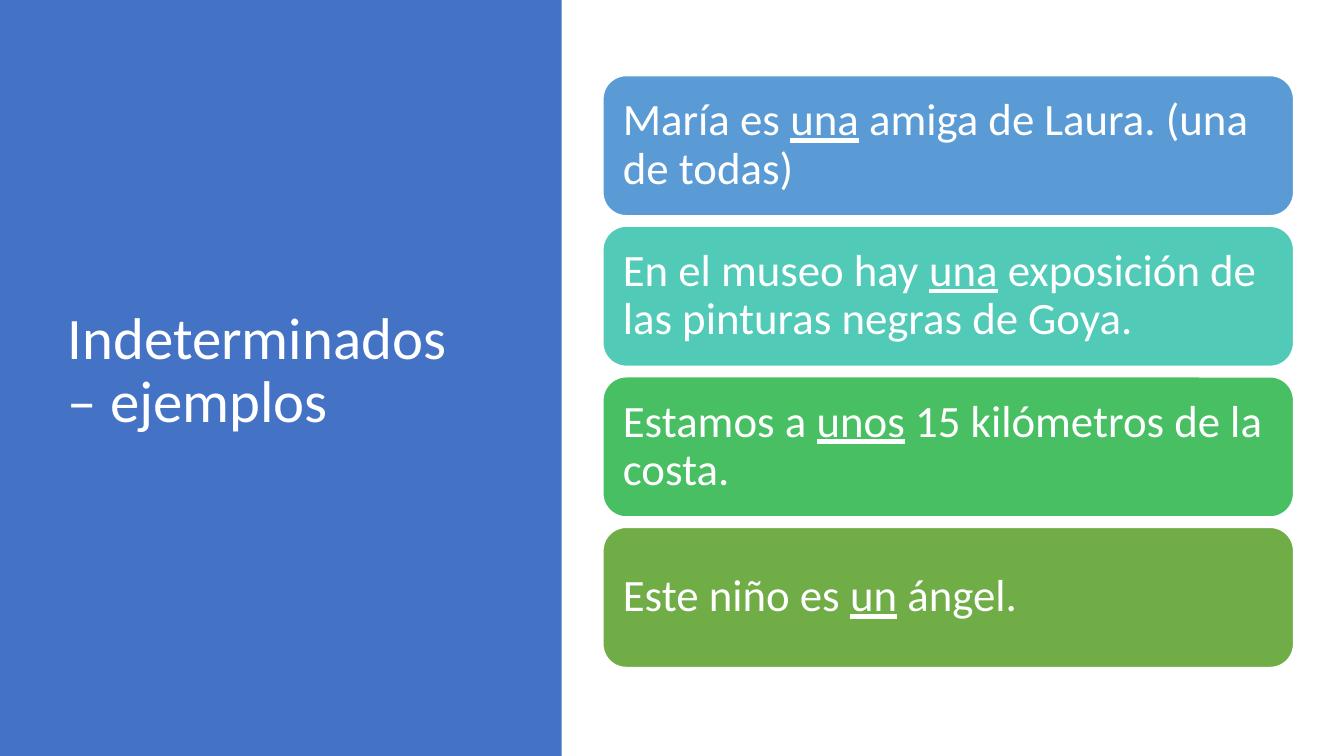
from pptx import Presentation
from pptx.dml.color import RGBColor
from pptx.enum.shapes import MSO_SHAPE
from pptx.enum.text import MSO_ANCHOR, MSO_AUTO_SIZE, PP_ALIGN
from pptx.util import Inches, Pt

COLORS = {
    "white": "FFFFFF",
    "panel": "4472C4",
    "blue": "5B9BD5",
    "teal": "52CAB8",
    "green": "49BF64",
    "olive": "70AD47",
}
EXAMPLES = [
    ("blue", "María es ", "una", " amiga de Laura. (una de todas)"),
    ("teal", "En el museo hay ", "una", " exposición de las pinturas negras de Goya."),
    ("green", "Estamos a ", "unos", " 15 kilómetros de la costa."),
    ("olive", "Este niño es ", "un", " ángel."),
]
CARD_TOP, CARD_HEIGHT, CARD_PITCH = 0.75, 1.39, 1.494


def add_run(paragraph, text, size, underline=None):
    run = paragraph.add_run()
    run.text = text
    run.font.name = "Calibri"
    run.font.size = Pt(size)
    run.font.color.rgb = RGBColor.from_string(COLORS["white"])
    run.font.underline = underline


def add_block(preset, left, top, width, height, color):
    block = slide.shapes.add_shape(
        preset, Inches(left), Inches(top), Inches(width), Inches(height))
    block.shadow.inherit = False
    block.fill.solid()
    block.fill.fore_color.rgb = RGBColor.from_string(COLORS[color])
    return block


prs = Presentation()
prs.slide_width, prs.slide_height = Inches(13.33), Inches(7.5)
slide = prs.slides.add_slide(prs.slide_layouts[5])

panel = add_block(MSO_SHAPE.RECTANGLE, 0, 0, 5.57, 7.5, "panel")
panel.line.fill.background()

title = slide.shapes.title
title._element.addprevious(panel._element)  # the panel lies behind the title
title.left, title.top = Inches(0.57), Inches(0.68)
title.width, title.height = Inches(4.16), Inches(6.02)
title.text_frame.word_wrap = True
title.text_frame.auto_size = MSO_AUTO_SIZE.NONE
title.text_frame.vertical_anchor = MSO_ANCHOR.MIDDLE
heading = title.text_frame.paragraphs[0]
heading.alignment = PP_ALIGN.LEFT
heading.line_spacing = 0.9
add_run(heading, "Indeterminados – ejemplos", 42)

for row, (color, before, article, after) in enumerate(EXAMPLES):
    card = add_block(MSO_SHAPE.ROUNDED_RECTANGLE, 5.98, CARD_TOP + row * CARD_PITCH,
                     6.85, CARD_HEIGHT, color)
    card.line.color.rgb = RGBColor.from_string(COLORS["white"])
    card.line.width = Pt(1)
    frame = card.text_frame
    frame.word_wrap = True
    frame.vertical_anchor = MSO_ANCHOR.MIDDLE
    frame.margin_left = frame.margin_right = Inches(0.13)
    frame.margin_top = frame.margin_bottom = Inches(0.13)
    sentence = frame.paragraphs[0]
    sentence.alignment = PP_ALIGN.LEFT
    sentence.line_spacing = 0.9
    add_run(sentence, before, 32)
    add_run(sentence, article, 32, underline=True)
    add_run(sentence, after, 32)

prs.save("out.pptx")
